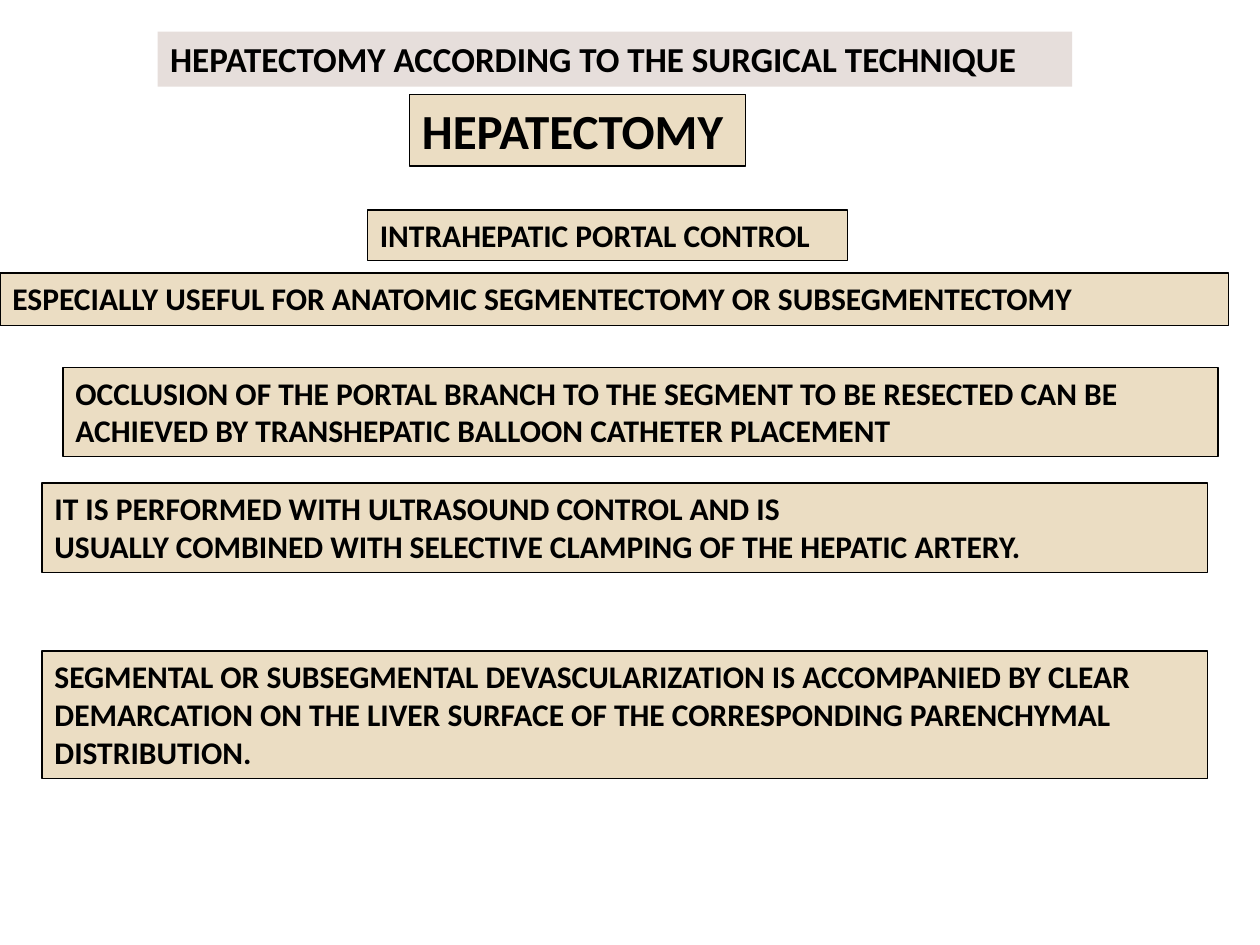
from dataclasses import dataclass
from typing import Optional

from pptx import Presentation
from pptx.dml.color import RGBColor
from pptx.enum.shapes import MSO_SHAPE
from pptx.enum.text import MSO_ANCHOR, MSO_AUTO_SIZE, PP_ALIGN
from pptx.util import Pt


@dataclass(frozen=True)
class Theme:
    font: str = "Calibri"
    ink: str = "000000"
    title_fill: str = "E6DEDB"
    box_fill: str = "EBDDC3"
    line: float = 0.75
    title: float = 20
    heading: float = 28
    body: float = 18


@dataclass(frozen=True)
class Box:
    left: float
    top: float
    width: float
    height: float
    lines: tuple[str, ...]
    size: float


THEME = Theme()
TITLE = Box(90, 18, 522.7, 31.5,
            ("HEPATECTOMY ACCORDING TO THE SURGICAL TECHNIQUE",), THEME.title)
BOXES = (
    Box(234, 54, 192, 41, ("HEPATECTOMY",), THEME.heading),
    Box(210, 120, 274.5, 29, ("INTRAHEPATIC PORTAL CONTROL",), THEME.body),
    Box(0, 156, 702, 30,
        ("ESPECIALLY USEFUL FOR ANATOMIC SEGMENTECTOMY OR SUBSEGMENTECTOMY",), THEME.body),
    Box(36, 210, 660, 51,
        ("OCCLUSION OF THE PORTAL BRANCH TO THE SEGMENT TO BE RESECTED CAN BE "
         "ACHIEVED BY TRANSHEPATIC BALLOON CATHETER PLACEMENT",), THEME.body),
    Box(24, 276, 666, 51,
        ("IT IS PERFORMED WITH ULTRASOUND CONTROL AND IS",
         "USUALLY COMBINED WITH SELECTIVE CLAMPING OF THE HEPATIC ARTERY."), THEME.body),
    Box(24, 372, 666, 72.7,
        ("SEGMENTAL OR SUBSEGMENTAL DEVASCULARIZATION IS ACCOMPANIED BY CLEAR "
         "DEMARCATION ON THE LIVER SURFACE OF THE CORRESPONDING PARENCHYMAL "
         "DISTRIBUTION.",), THEME.body),
)


def write(tf, lines: tuple[str, ...], *, size: float, bold: bool = True,
          color: str = THEME.ink, font: str = THEME.font) -> None:
    """Write one left-aligned paragraph per line from the top of the frame."""
    tf.auto_size = MSO_AUTO_SIZE.NONE
    tf.word_wrap = True
    tf.vertical_anchor = MSO_ANCHOR.TOP
    for i, text in enumerate(lines):
        p = tf.add_paragraph() if i else tf.paragraphs[0]
        p.alignment = PP_ALIGN.LEFT
        r = p.add_run()
        r.text = text
        r.font.name, r.font.size, r.font.bold = font, Pt(size), bold
        r.font.color.rgb = RGBColor.from_string(color)


def style(sp, box: Box, *, fill: str, line: Optional[str] = None) -> None:
    """Place, paint and fill a shape with the text of its box."""
    sp.left, sp.top = Pt(box.left), Pt(box.top)
    sp.width, sp.height = Pt(box.width), Pt(box.height)
    sp.fill.solid()
    sp.fill.fore_color.rgb = RGBColor.from_string(fill)
    if line:
        sp.line.color.rgb = RGBColor.from_string(line)
        sp.line.width = Pt(THEME.line)
    else:
        sp.line.fill.background()
    write(sp.text_frame, box.lines, size=box.size)


def add_box(s, box: Box) -> None:
    """Add an outlined statement box."""
    sp = s.shapes.add_shape(MSO_SHAPE.RECTANGLE, Pt(box.left), Pt(box.top),
                            Pt(box.width), Pt(box.height))
    sp.shadow.inherit = False
    style(sp, box, fill=THEME.box_fill, line=THEME.ink)


def main() -> None:
    """Build the slide and save it."""
    prs = Presentation()
    prs.slide_width, prs.slide_height = Pt(720), Pt(540)
    s = prs.slides.add_slide(prs.slide_layouts[5])
    style(s.shapes.title, TITLE, fill=THEME.title_fill)
    for box in BOXES:
        add_box(s, box)
    prs.save("out.pptx")


if __name__ == "__main__":
    main()
